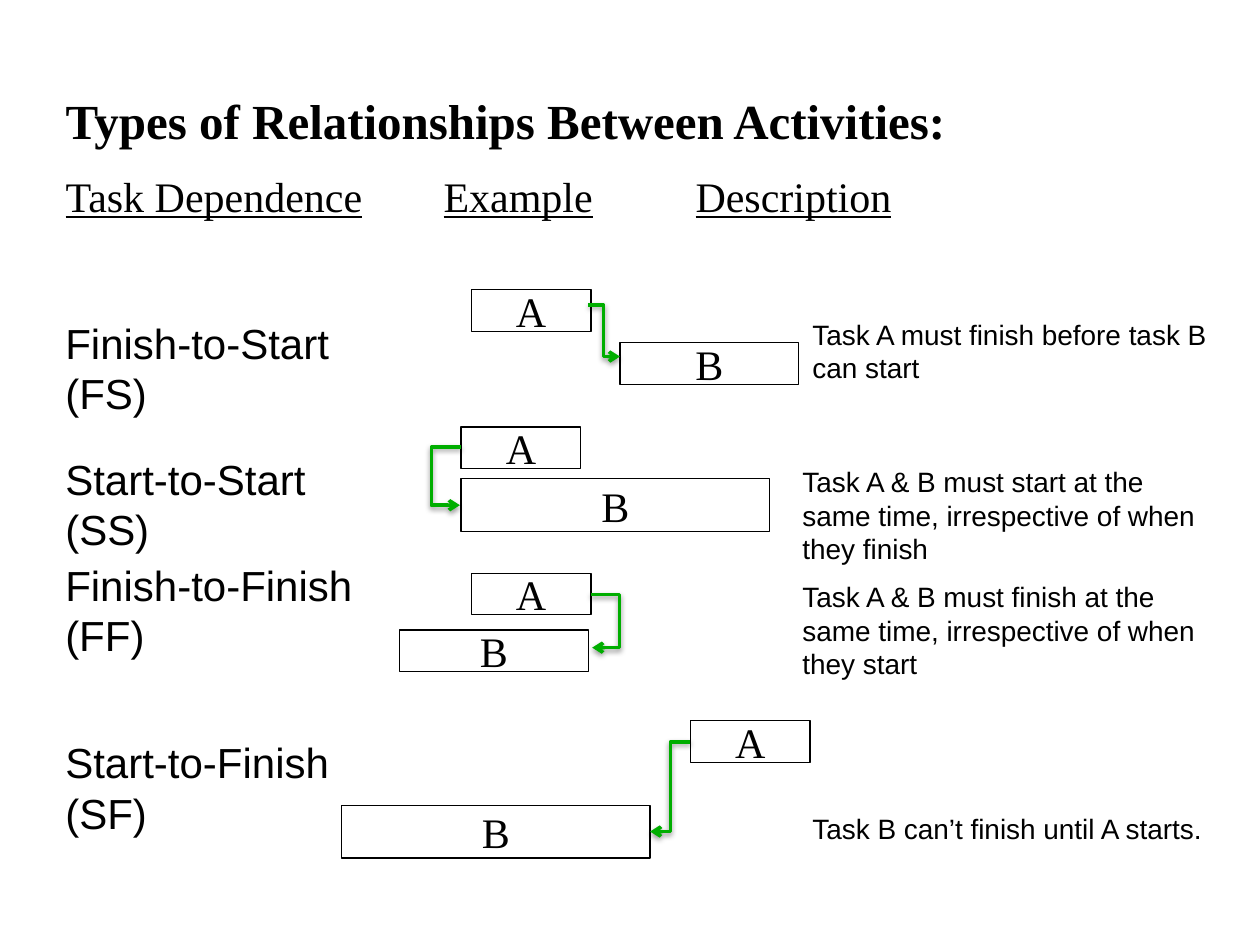
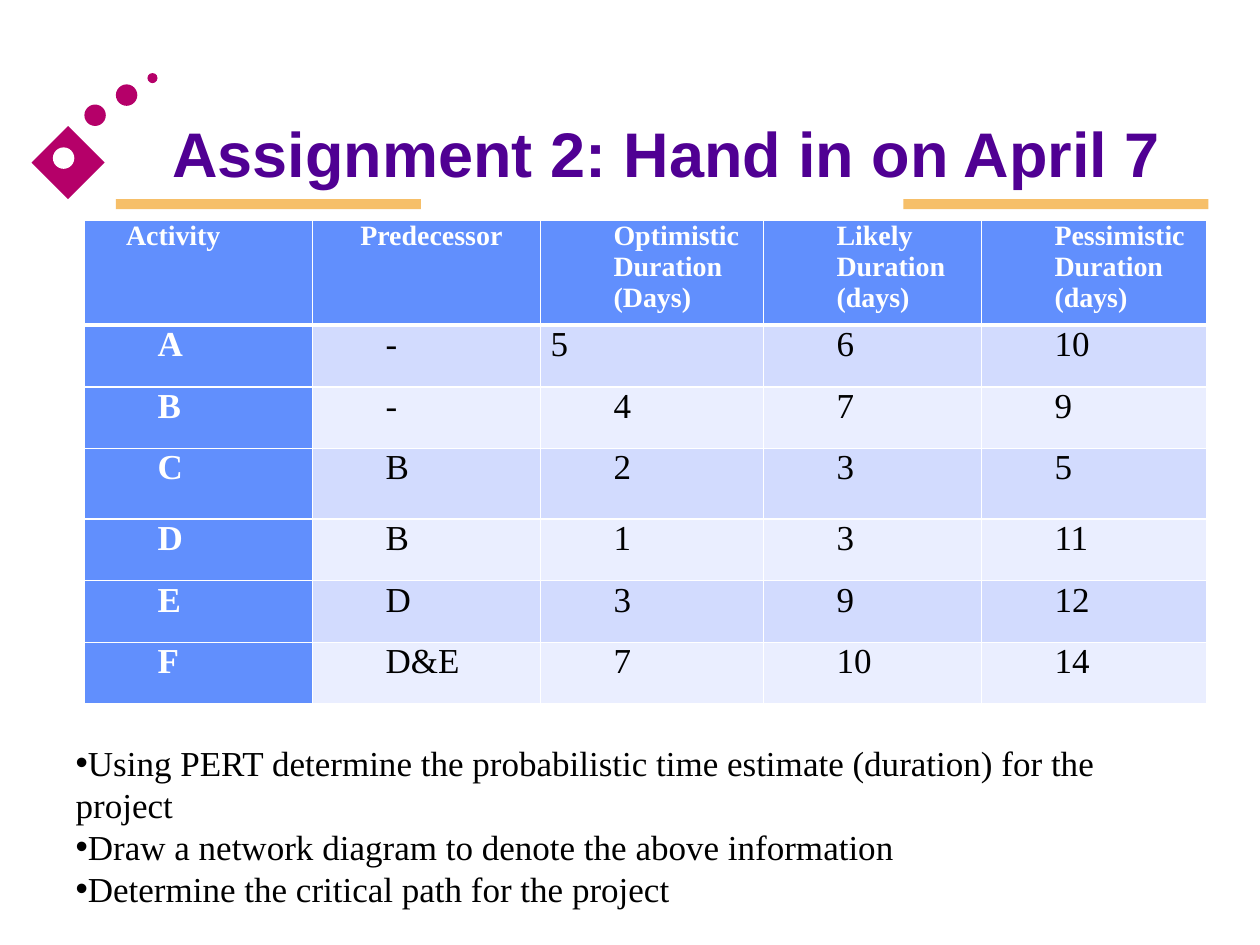
from dataclasses import dataclass

from lxml import etree
from pptx import Presentation
from pptx import util as u
from pptx.dml.color import RGBColor
from pptx.enum import shapes, text
from pptx.oxml import parse_xml
from pptx.oxml.ns import nsdecls, qn

In = u.Inches
LEFT, CENTER, JUSTIFY = text.PP_ALIGN.LEFT, text.PP_ALIGN.CENTER, text.PP_ALIGN.JUSTIFY
SHAPE = shapes.MSO_SHAPE


@dataclass(frozen=True)
class Theme:
    serif: str = "Times New Roman"
    sans: str = "Arial"
    black: str = "000000"
    white: str = "FFFFFF"
    purple: str = "500093"
    magenta: str = "B50069"
    gold: str = "F6BF69"
    green: str = "00AE00"
    blue: str = "618FFD"
    bands: tuple = ("D2DBFE", "EAEEFF")
    title: int = 36
    heading: int = 28
    label: int = 24
    body: int = 20
    small: int = 16
    leading: float = 1.2


T = Theme()

# Task dependence, label top and width, description left and top
RELATIONS = [
    ("Finish-to-Start (FS)", 2.47, 2.85, 6.35, 2.47,
     "Task A must finish before task B can start"),
    ("Start-to-Start (SS)", 3.55, 2.85, 6.27, 3.64,
     "Task A & B must start at the same time, irrespective of when they finish"),
    ("Finish-to-Finish (FF)", 4.39, 3, 6.27, 4.55,
     "Task A & B must finish at the same time, irrespective of when they start"),
    ("Start-to-Finish (SF)", 5.8, 2.85, 6.35, 6.39,
     "Task B can’t finish until A starts."),
]
# Bars of each example: left, top, width, height
BARS = [
    ("A", 3.74, 2.3, 0.95, 0.33), ("B", 4.92, 2.72, 1.42, 0.33),
    ("A", 3.66, 3.39, 0.95, 0.33), ("B", 3.66, 3.8, 2.45, 0.42),
    ("A", 3.74, 4.55, 0.95, 0.33), ("B", 3.17, 5, 1.5, 0.33),
    ("A", 5.48, 5.72, 0.95, 0.33), ("B", 2.71, 6.39, 2.45, 0.42),
]
# Arrows: start x, y, end x, y, and the x of the vertical stretch
ARROWS = [
    (4.67, 2.42, 4.92, 2.83, 4.79),
    (3.66, 3.55, 3.65, 4.01, 3.42),
    (4.69, 4.72, 4.7, 5.14, 4.92),
    (5.48, 5.89, 5.16, 6.6, 5.32),
]

HEADERS = ["Activity", "Predecessor", "Optimistic Duration (Days)",
           "Likely Duration\n(days)", "Pessimistic Duration\n(days)"]
ACTIVITIES = [
    ("A", "-", "5", "6", "10"),
    ("B", "-", "4", "7", "9"),
    ("C", "B", "2", "3", "5"),
    ("D", "B", "1", "3", "11"),
    ("E", "D", "3", "9", "12"),
    ("F", "D&E", "7", "10", "14"),
]
TASKS = [
    "Using PERT determine the probabilistic time estimate (duration) for the project",
    "Draw a network diagram to denote the above information",
    "Determine the critical path for the project",
]


# ---- Text helpers ----
def rgb(color):
    return RGBColor.from_string(color)


def style(p, size, font=T.serif, color=T.black, bold=False, align=LEFT, leading=T.leading):
    p.alignment = align
    p.space_before = u.Pt(0)
    if leading:
        p.line_spacing = u.Pt(size * leading)
    for r in p.runs:
        f = r.font
        f.size, f.name, f.bold = u.Pt(size), font, bold
        f.color.rgb = rgb(color)


def indent(p, left, first=0):
    pPr = p._p.get_or_add_pPr()
    pPr.set("marL", str(In(left)))
    pPr.set("indent", str(In(first)))
    return pPr


def place(sp, x, y, w, h):
    sp.left, sp.top, sp.width, sp.height = In(x), In(y), In(w), In(h)


def label(s, words, x, y, w, h, size):
    tf = s.shapes.add_textbox(In(x), In(y), In(w), In(h)).text_frame
    tf.word_wrap = True
    tf.text = words
    style(tf.paragraphs[0], size, T.sans)


# ---- Shape helpers ----
def shape(s, kind, x, y, w, h, fill, line=None):
    sp = s.shapes.add_shape(kind, In(x), In(y), In(w), In(h))
    sp.shadow.inherit = False
    sp.fill.solid()
    sp.fill.fore_color.rgb = rgb(fill)
    if line:
        sp.line.color.rgb = rgb(line)
        sp.line.width = u.Pt(0.75)
    else:
        sp.line.fill.background()
    return sp


def bar(s, name, x, y, w, h):
    tf = shape(s, SHAPE.RECTANGLE, x, y, w, h, T.white, T.black).text_frame
    tf.word_wrap = False
    tf.vertical_anchor = text.MSO_ANCHOR.MIDDLE
    tf.text = name
    style(tf.paragraphs[0], T.label, align=CENTER)


def elbow_arrow(s, x1, y1, x2, y2, bend_x):
    c = s.shapes.add_connector(shapes.MSO_CONNECTOR.ELBOW, In(x1), In(y1), In(x2), In(y2))
    c.line.color.rgb = rgb(T.green)
    c.line.width = u.Pt(2)
    spPr = c._element.spPr
    # The bend is a share of the way from start to end
    guides = spPr.find(qn("a:prstGeom")).get_or_add_avLst()
    bend = round((bend_x - x1) / (x2 - x1) * 100000)
    etree.SubElement(guides, qn("a:gd"), name="adj1", fmla=f"val {bend}")
    etree.SubElement(spPr.find(qn("a:ln")), qn("a:tailEnd"), type="arrow")
    spPr.append(parse_xml(
        f'<a:effectLst {nsdecls("a")}>'
        f'<a:outerShdw blurRad="{u.Pt(3.1)}" dist="{u.Pt(1.6)}" dir="5400000" rotWithShape="0">'
        f'<a:srgbClr val="{T.black}"><a:alpha val="38000"/></a:srgbClr>'
        '</a:outerShdw></a:effectLst>'))


def ornament(s):
    for x in (0.92, 7.17):
        shape(s, SHAPE.RECTANGLE, x, 1.58, 2.42, 0.08, T.gold)
    shape(s, SHAPE.DIAMOND, 0.25, 1, 0.58, 0.58, T.magenta)
    for x, y, d, fill in [(0.42, 1.17, 0.17, T.white), (0.67, 0.83, 0.17, T.magenta),
                          (0.92, 0.67, 0.17, T.magenta), (1.17, 0.58, 0.08, T.magenta)]:
        shape(s, SHAPE.OVAL, x, y, d, d, fill)


# ---- Table helpers ----
def borders(cell, top, bottom):
    tcPr = cell._tc.get_or_add_tcPr()
    for side, width in (("L", 1), ("R", 1), ("T", top), ("B", bottom)):
        tcPr.append(parse_xml(
            f'<a:ln{side} {nsdecls("a")} w="{u.Pt(width)}"><a:solidFill>'
            f'<a:srgbClr val="{T.white}"/></a:solidFill></a:ln{side}>'))


def cell_indent(row, col):
    if row == 0:
        return {0: (0.25, 0), 1: (0.5, -0.2)}.get(col, (0.5, 0))
    return (0, 0) if (row, col) == (1, 2) else (0.5, 0)


def fill_cell(cell, words, row, col):
    header = row == 0
    strong = header or col == 0
    borders(cell, 3 if row == 1 else 1, 3 if header else 1)
    cell.fill.solid()
    cell.fill.fore_color.rgb = rgb(T.blue if strong else T.bands[(row - 1) % 2])
    cell.margin_left = cell.margin_right = In(0.08)
    cell.margin_top = cell.margin_bottom = 0
    cell.text_frame.text = words
    for p in cell.text_frame.paragraphs:
        style(p, T.small if header else T.body, color=T.white if strong else T.black,
              bold=strong, align=LEFT if header else JUSTIFY, leading=None)
        indent(p, *cell_indent(row, col))


def activity_table(s):
    rows = [HEADERS, *ACTIVITIES]
    table = s.shapes.add_table(len(rows), len(HEADERS), In(0.67), In(1.75),
                               In(8.92), In(3.86)).table
    for column, w in zip(table.columns, (1.81, 1.81, 1.77, 1.73, 1.79)):
        column.width = In(w)
    for row, h in zip(table.rows, (0.83, 0.49, 0.49, 0.56, 0.49, 0.49, 0.49)):
        row.height = In(h)
    for i, values in enumerate(rows):
        for j, words in enumerate(values):
            fill_cell(table.cell(i, j), words, i, j)


# ---- Slides ----
def relationships_slide(prs):
    s = prs.slides.add_slide(prs.slide_layouts[5])

    # Title with the column headings on tab stops
    title = s.shapes.title
    place(title, 0.42, 0.67, 9.25, 1.18)
    tf = title.text_frame
    tf.vertical_anchor = text.MSO_ANCHOR.TOP
    tf.text = "Types of Relationships Between Activities:"
    style(tf.paragraphs[0], T.heading, bold=True)
    p = tf.add_paragraph()
    for words in ("Task Dependence", "\t\t", "Example", "\t\t", "Description"):
        r = p.add_run()
        r.text = words
        r.font.underline = words != "\t\t"
    style(p, T.label)
    p.space_before = u.Pt(T.label / 2)

    # One row per relationship
    for name, y, w, note_x, note_y, note in RELATIONS:
        label(s, name, 0.42, y, w, 0.5, T.label)
        label(s, note, note_x, note_y, 3.4, 0.64, T.small)
    for item in BARS:
        bar(s, *item)
    for item in ARROWS:
        elbow_arrow(s, *item)


def assignment_slide(prs):
    s = prs.slides.add_slide(prs.slide_layouts[1])
    ornament(s)

    title = s.shapes.title
    place(title, 0.83, 0.67, 8.92, 1.08)
    title.text_frame.text = "Assignment 2: Hand in on April 7"
    style(title.text_frame.paragraphs[0], T.title, T.sans, T.purple, True, CENTER)

    activity_table(s)

    # Task list
    body = s.placeholders[1]
    place(body, 0.5, 5.83, 9.08, 1.45)
    tf = body.text_frame
    tf.vertical_anchor = text.MSO_ANCHOR.MIDDLE
    tf.text = "\n".join(TASKS)
    for p in tf.paragraphs:
        style(p, T.body)
        etree.SubElement(indent(p, 0), qn("a:buChar"), char="•")


def main():
    prs = Presentation()
    prs.slide_width, prs.slide_height = In(10), In(7.5)
    relationships_slide(prs)
    assignment_slide(prs)
    prs.save("out.pptx")


if __name__ == "__main__":
    main()
